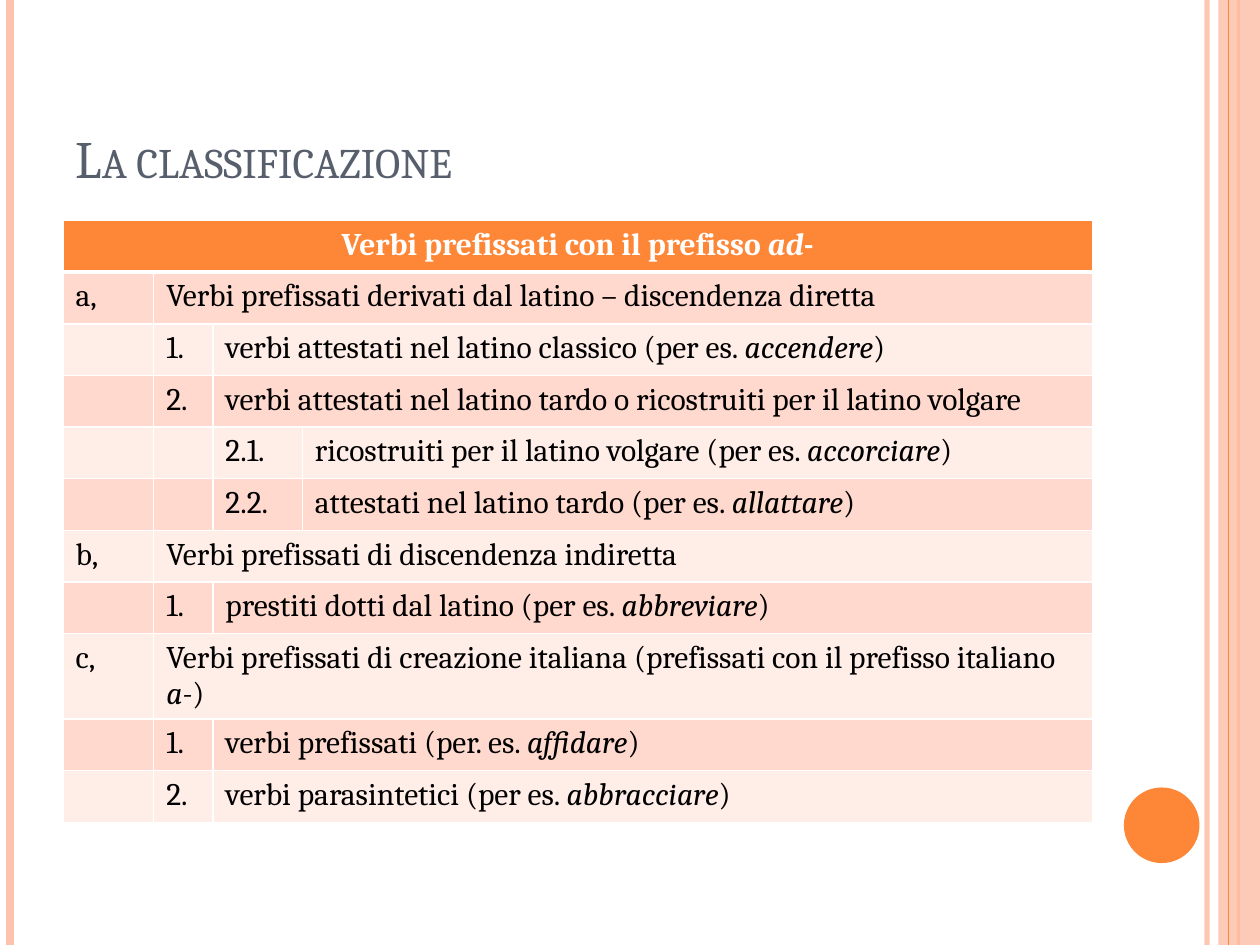
from dataclasses import dataclass

from lxml import etree
from pptx import Presentation
from pptx import util as u
from pptx.dml.color import RGBColor
from pptx.enum import shapes, text
from pptx.oxml.ns import qn


@dataclass(frozen=True)
class Theme:
    """Colours, typeface and type sizes of the slide."""

    font: str = "Cambria"
    title_size: float = 30
    body_size: float = 18
    accent: str = "FE8637"
    pale: str = "FEC3AE"
    slate: str = "575F6D"
    white: str = "FFFFFF"
    black: str = "000000"
    bands: tuple = ("FFD9CE", "FFEDE8")


class SlideBuilder:
    """Draws themed elements on one slide."""

    def __init__(self, slide, theme):
        """Keep the slide and its theme."""
        self.slide = slide
        self.theme = theme

    def set_opacity(self, properties, percent):
        """Make the solid fill inside the given properties translucent."""
        color = next(properties.iter(qn("a:srgbClr")))
        etree.SubElement(color, qn("a:alpha"), val=str(percent * 1000))

    def rule(self, x, color, width, opacity=100):
        """Draw a vertical line over the full slide height."""
        line = self.slide.shapes.add_connector(
            shapes.MSO_CONNECTOR.STRAIGHT, u.Inches(x), 0, u.Inches(x), u.Inches(7.5)
        )
        line.line.color.rgb = RGBColor.from_string(color)
        line.line.width = u.Pt(width)
        properties = line._element.spPr
        if opacity < 100:
            self.set_opacity(properties, opacity)
        etree.SubElement(properties, qn("a:effectLst"))

    def block(self, kind, left, top, width, height, color, opacity=100):
        """Draw a filled shape without outline."""
        shape = self.slide.shapes.add_shape(
            kind, u.Inches(left), u.Inches(top), u.Inches(width), u.Inches(height)
        )
        shape.shadow.inherit = False
        shape.fill.solid()
        shape.fill.fore_color.rgb = RGBColor.from_string(color)
        shape.line.fill.background()
        if opacity < 100:
            self.set_opacity(shape._element.spPr, opacity)

    def style_run(self, run, size, color):
        """Apply typeface, size and colour to a run."""
        run.font.name = self.theme.font
        run.font.size = u.Pt(size)
        run.font.color.rgb = RGBColor.from_string(color)

    def title(self, wording, left, top, width, height):
        """Place the title in small capitals."""
        shape = self.slide.shapes.title
        shape.left, shape.top = u.Inches(left), u.Inches(top)
        shape.width, shape.height = u.Inches(width), u.Inches(height)
        frame = shape.text_frame
        frame.text = wording
        frame.vertical_anchor = text.MSO_ANCHOR.BOTTOM
        paragraph = frame.paragraphs[0]
        paragraph.alignment = text.PP_ALIGN.LEFT
        run = paragraph.runs[0]
        self.style_run(run, self.theme.title_size, self.theme.slate)
        run._r.get_or_add_rPr().set("cap", "small")

    def cell_text(self, cell, wording, header):
        """Write a cell, with italics between asterisks."""
        paragraph = cell.text_frame.paragraphs[0]
        if header:
            paragraph.alignment = text.PP_ALIGN.CENTER
        color = self.theme.white if header else self.theme.black
        for index, part in enumerate(wording.split("*")):
            if part:
                run = paragraph.add_run()
                run.text = part
                self.style_run(run, self.theme.body_size, color)
                run.font.bold = header
                run.font.italic = index % 2 == 1

    def cell_borders(self, cell, top, bottom):
        """Draw white borders, with the top and bottom widths given."""
        properties = cell._tc.get_or_add_tcPr()
        widths = {"lnL": 1, "lnR": 1, "lnT": top, "lnB": bottom}
        for index, (side, width) in enumerate(widths.items()):
            border = etree.Element(qn(f"a:{side}"), w=str(u.Pt(width)))
            fill = etree.SubElement(border, qn("a:solidFill"))
            etree.SubElement(fill, qn("a:srgbClr"), val=self.theme.white)
            properties.insert(index, border)

    def outline_table(self, left, top, column_widths, row_height, entries):
        """Build a table whose entries are indented by their level."""
        last = len(column_widths) - 1
        table = self.slide.shapes.add_table(
            len(entries), last + 1, u.Inches(left), u.Inches(top),
            u.Inches(sum(column_widths)), u.Inches(row_height * len(entries)),
        ).table
        for column, width in zip(table.columns, column_widths):
            column.width = u.Inches(width)
        for index, (level, label, wording) in enumerate(entries):
            table.rows[index].height = u.Inches(row_height)
            header = index == 0
            color = self.theme.accent if header else self.theme.bands[(index - 1) % 2]
            for column in range(last + 1):
                cell = table.cell(index, column)
                cell.fill.solid()
                cell.fill.fore_color.rgb = RGBColor.from_string(color)
                self.cell_borders(cell, 3 if index == 1 else 1, 3 if header else 1)
            if label:
                self.cell_text(table.cell(index, level), label, header)
            start = level + 1
            if start < last:
                table.cell(index, start).merge(table.cell(index, last))
            self.cell_text(table.cell(index, start), wording, header)


ENTRIES = [
    (-1, "", "Verbi prefissati con il prefisso *ad*-"),
    (0, "a,", "Verbi prefissati derivati dal latino – discendenza diretta"),
    (1, "1.", "verbi attestati nel latino classico (per es. *accendere*)"),
    (1, "2.", "verbi attestati nel latino tardo o ricostruiti per il latino volgare"),
    (2, "2.1.", "ricostruiti per il latino volgare (per es. *accorciare*)"),
    (2, "2.2.", "attestati nel latino tardo (per es. *allattare*)"),
    (0, "b,", "Verbi prefissati di discendenza indiretta"),
    (1, "1.", "prestiti dotti dal latino (per es. *abbreviare*)"),
    (0, "c,", "Verbi prefissati di creazione italiana (prefissati con il prefisso italiano *a-*)"),
    (1, "1.", "verbi prefissati (per. es. *affidare*)"),
    (1, "2.", "verbi parasintetici (per es. *abbracciare*)"),
]


def main():
    """Build and save the presentation."""
    presentation = Presentation()
    presentation.slide_width = u.Inches(10)
    presentation.slide_height = u.Inches(7.5)
    theme = Theme()
    slide = presentation.slides.add_slide(presentation.slide_layouts[5])
    builder = SlideBuilder(slide, theme)
    builder.rule(9.58, theme.pale, 3, opacity=93)
    builder.rule(0.08, theme.pale, 4.5)
    builder.rule(9.83, theme.accent, 1.5)
    builder.block(shapes.MSO_SHAPE.RECTANGLE, 9.67, 0, 0.33, 7.5, theme.pale, opacity=87)
    builder.rule(9.75, theme.accent, 0.75)
    builder.block(shapes.MSO_SHAPE.OVAL, 8.92, 6.25, 0.6, 0.6, theme.accent)
    builder.title("La classificazione", 0.5, 0.3, 8.17, 1.25)
    builder.outline_table(0.5, 1.75, [0.72, 0.47, 0.71, 6.27], 0.41, ENTRIES)
    presentation.save("out.pptx")


if __name__ == "__main__":
    main()
